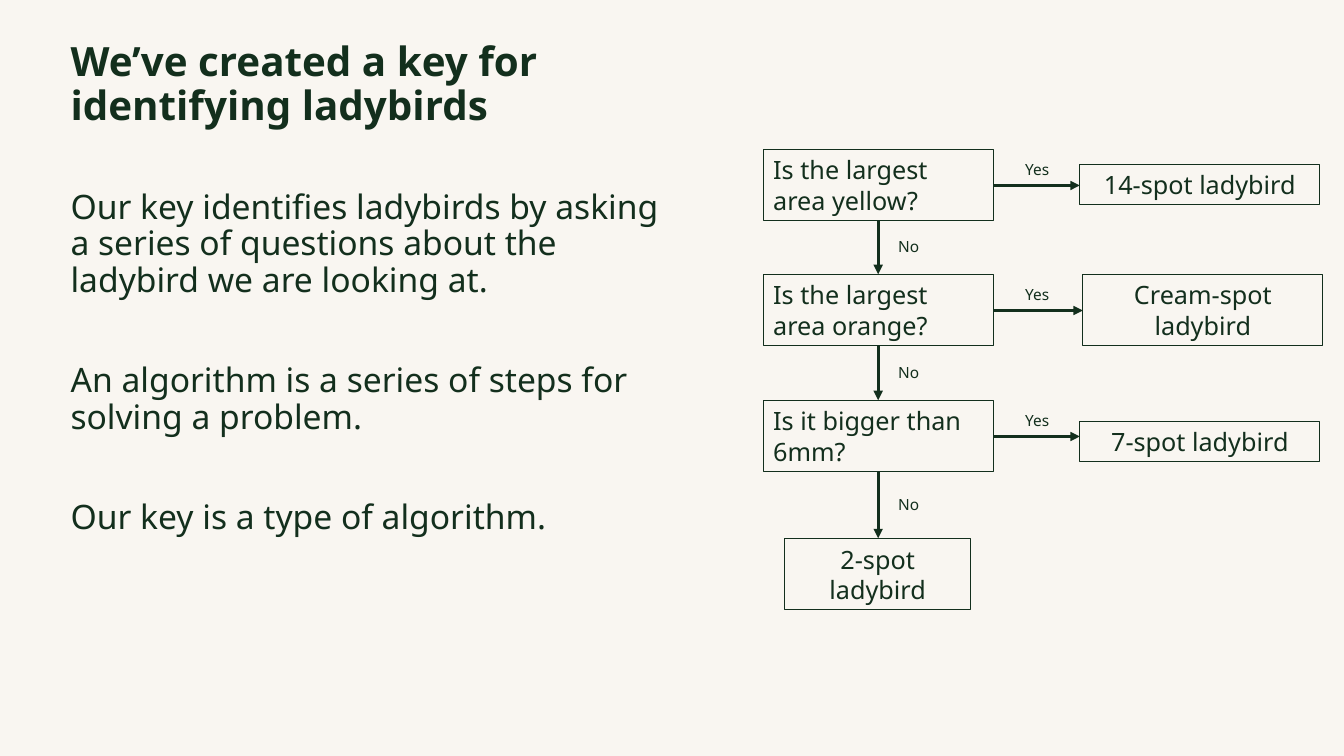
import pptx
import pptx.util
import pptx.dml.color
import pptx.enum.shapes
import pptx.enum.text
import pptx.oxml.ns
import lxml.etree

PX = 9144  # one px is a hundredth of an inch
FONT = "Noto Sans"
COLOURS = {"paper": "F9F6F1", "ink": "132F1D"}
INK = pptx.dml.color.RGBColor.from_string(COLOURS["ink"])
ALIGN = pptx.enum.text.PP_ALIGN
ANCHOR = pptx.enum.text.MSO_ANCHOR
qn = pptx.oxml.ns.qn


def add_text(paragraph, text, size, align=ALIGN.LEFT, bold=False):
    paragraph.alignment = align
    run = paragraph.add_run()
    run.text = text
    run.font.name = FONT
    run.font.size = pptx.util.Pt(size)
    run.font.bold = bold
    run.font.color.rgb = INK


def add_box(text, left, top, width, height, align):
    box = slide.shapes.add_shape(
        pptx.enum.shapes.MSO_SHAPE.RECTANGLE,
        left * PX, top * PX, width * PX, height * PX)
    box.shadow.inherit = False
    box.fill.background()
    box.line.color.rgb = INK
    box.line.width = pptx.util.Pt(0.75)
    box.text_frame.word_wrap = True
    box.text_frame.vertical_anchor = ANCHOR.MIDDLE
    add_text(box.text_frame.paragraphs[0], text, 18, align)


deck = pptx.Presentation()
deck.slide_width, deck.slide_height = 1333 * PX, 750 * PX
slide = deck.slides.add_slide(deck.slide_layouts[1])
slide.background.fill.solid()
slide.background.fill.fore_color.rgb = pptx.dml.color.RGBColor.from_string(COLOURS["paper"])

# Title and explanation
title, explanation = slide.placeholders
for holder, top, height, anchor in [(title, 40, 90, ANCHOR.MIDDLE),
                                    (explanation, 184, 492, ANCHOR.TOP)]:
    holder.left, holder.top, holder.width, holder.height = (
        60 * PX, top * PX, 606 * PX, height * PX)
    holder.text_frame.word_wrap = True
    holder.text_frame.auto_size = pptx.enum.text.MSO_AUTO_SIZE.NONE
    holder.text_frame.vertical_anchor = anchor

heading = title.text_frame.paragraphs[0]
heading.line_spacing = 0.9
add_text(heading, "We’ve created a key for identifying ladybirds", 28.8, bold=True)

statements = [
    "Our key identifies ladybirds by asking a series of questions about the ladybird we are looking at.",
    "An algorithm is a series of steps for solving a problem.",
    "Our key is a type of algorithm.",
]
for index, statement in enumerate(statements):
    frame = explanation.text_frame
    paragraph = frame.add_paragraph() if index else frame.paragraphs[0]
    properties = paragraph._p.get_or_add_pPr()
    properties.set("marL", "0")
    properties.set("indent", "0")
    lxml.etree.SubElement(properties, qn("a:buNone"))
    paragraph.line_spacing = 0.9
    paragraph.space_before = pptx.util.Pt(46 if index else 0)
    add_text(paragraph, statement, 24)

# Key: question, its top, outcome, outcome left, top and height
steps = [
    ("Is the largest area yellow?", 148, "14-spot ladybird", 1071, 163, 40),
    ("Is the largest area orange?", 272, "Cream-spot ladybird", 1074, 272, 71),
    ("Is it bigger than 6mm?", 397, "7-spot ladybird", 1071, 418, 40),
]
QUESTION_LEFT, QUESTION_WIDTH, QUESTION_HEIGHT = 757, 228, 71
QUESTION_RIGHT = QUESTION_LEFT + QUESTION_WIDTH
MIDDLE = QUESTION_LEFT + QUESTION_WIDTH // 2
LAST_TOP = 534
next_tops = [step[1] for step in steps[1:]] + [LAST_TOP]

arrows, answers = [], []
for (question, top, outcome, left, outcome_top, height), next_top in zip(steps, next_tops):
    add_box(question, QUESTION_LEFT, top, QUESTION_WIDTH, QUESTION_HEIGHT, ALIGN.LEFT)
    add_box(outcome, left, outcome_top, 238, height, ALIGN.CENTER)
    bottom = top + QUESTION_HEIGHT
    yes_y = top + 36
    arrows.append((QUESTION_RIGHT, yes_y, left, yes_y))
    arrows.append((MIDDLE, bottom, MIDDLE, next_top))
    answers.append(("Yes", 1007, yes_y - 30, 46))
    answers.append(("No", 881, (bottom + next_top) // 2 - 15, 41))
add_box("2-spot ladybird", 778, LAST_TOP, 185, 71, ALIGN.CENTER)

# Arrows
for ends in arrows:
    arrow = slide.shapes.add_connector(
        pptx.enum.shapes.MSO_CONNECTOR.STRAIGHT, *[end * PX for end in ends])
    arrow.line.color.rgb = INK
    arrow.line.width = pptx.util.Pt(2.25)
    lxml.etree.SubElement(arrow.line._get_or_add_ln(), qn("a:tailEnd"), type="triangle")
    lxml.etree.SubElement(arrow._element.spPr, qn("a:effectLst"))

# Answers beside the arrows
for answer, left, top, width in answers:
    label = slide.shapes.add_textbox(left * PX, top * PX, width * PX, 29 * PX)
    label.text_frame.word_wrap = False
    add_text(label.text_frame.paragraphs[0], answer, 11)

deck.save("out.pptx")
